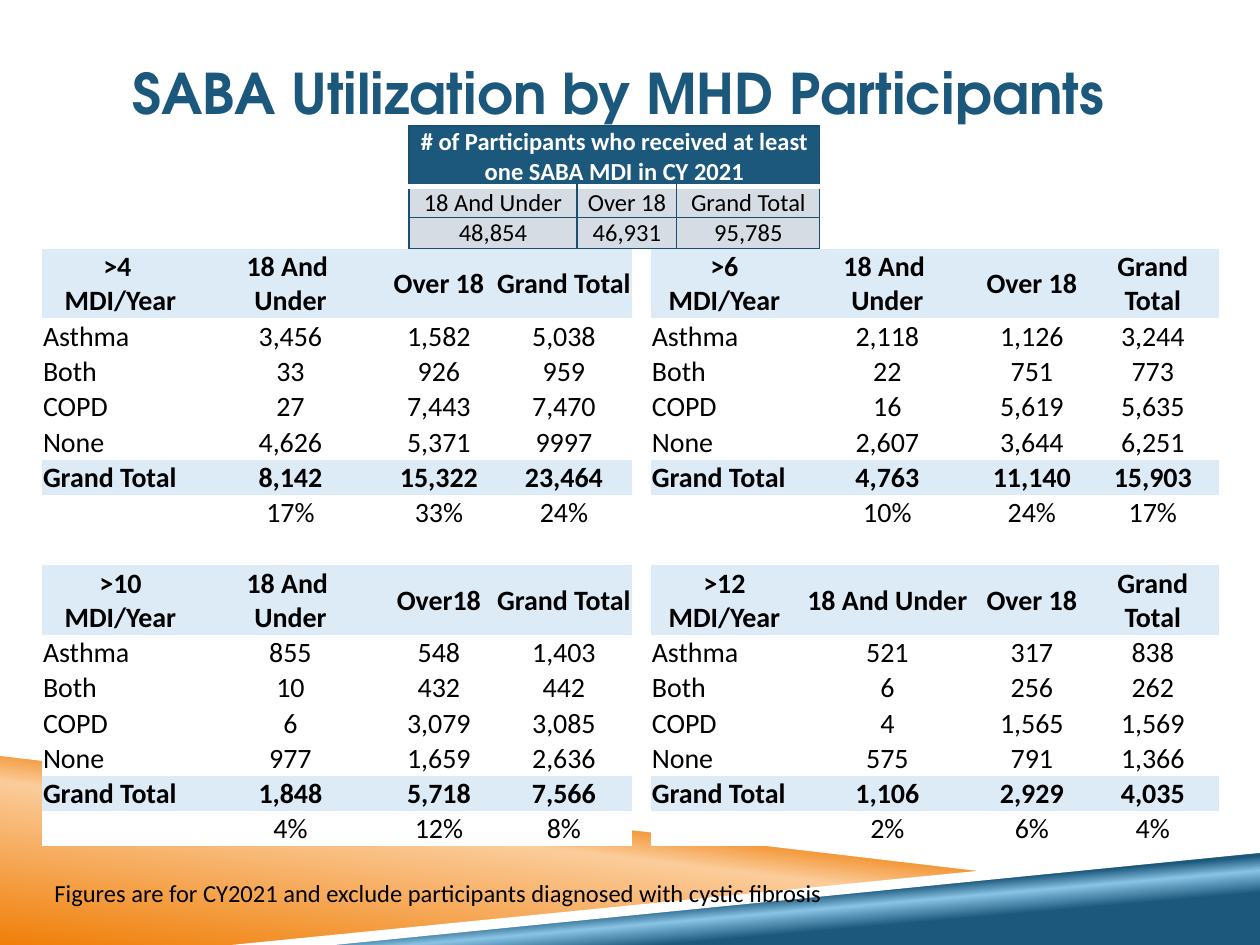
from lxml.etree import SubElement
from pptx import Presentation
from pptx.dml.color import RGBColor
from pptx.enum.text import MSO_ANCHOR as Anchor, PP_ALIGN as Align
from pptx.oxml.ns import qn
from pptx.util import Pt

PX = 914400 // 126
BLUE = RGBColor(0x1B, 0x58, 0x7C)
SKY = RGBColor(0x89, 0xC3, 0xE5)
NAVY = RGBColor(0x19, 0x50, 0x71)
ORANGE = RGBColor(0xF0, 0x7F, 0x09)
PEACH = RGBColor(0xFB, 0xCC, 0x9A)
PALE = RGBColor(0xDD, 0xEB, 0xF7)
GRAY = RGBColor(0xD6, 0xDC, 0xE4)
WHITE = RGBColor(0xFF, 0xFF, 0xFF)
BLACK = RGBColor(0, 0, 0)
PLAIN_TABLE = "{2D5ABB26-0587-4C30-8999-92F81FD0307C}"
GAP_COLUMN = 4

MDI_ROWS = [
    [">4 \nMDI/Year", "18 And \nUnder", "Over 18", "Grand Total", "",
     ">6 MDI/Year", "18 And \nUnder", "Over 18", "Grand Total"],
    ["Asthma", "3,456", "1,582", "5,038", "", "Asthma", "2,118", "1,126", "3,244"],
    ["Both", "33", "926", "959", "", "Both", "22", "751", "773"],
    ["COPD", "27", "7,443", "7,470", "", "COPD", "16", "5,619", "5,635"],
    ["None", "4,626", "5,371", "9997", "", "None", "2,607", "3,644", "6,251"],
    ["Grand Total", "8,142", "15,322", "23,464", "", "Grand Total", "4,763", "11,140", "15,903"],
    ["", "17%", "33%", "24%", "", "", "10%", "24%", "17%"],
    [""] * 9,
    [">10 MDI/Year", "18 And \nUnder", "Over18", "Grand Total", "",
     ">12 MDI/Year", "18 And Under", "Over 18", "Grand Total"],
    ["Asthma", "855", "548", "1,403", "", "Asthma", "521", "317", "838"],
    ["Both", "10", "432", "442", "", "Both", "6", "256", "262"],
    ["COPD", "6", "3,079", "3,085", "", "COPD", "4", "1,565", "1,569"],
    ["None", "977", "1,659", "2,636", "", "None", "575", "791", "1,366"],
    ["Grand Total", "1,848", "5,718", "7,566", "", "Grand Total", "1,106", "2,929", "4,035"],
    ["", "4%", "12%", "8%", "", "", "2%", "6%", "4%"],
]
SUMMARY_ROWS = [
    ["# of Participants who received at least one SABA MDI in CY 2021", "", ""],
    ["18 And Under", "Over 18", "Grand Total"],
    ["48,854", "46,931", "95,785"],
]


def write(frame, text, *, size, color=BLACK, bold=False, align=Align.LEFT, font="Calibri"):
    for index, line in enumerate(text.split("\n")):
        paragraph = frame.add_paragraph() if index else frame.paragraphs[0]
        paragraph.alignment = align
        if not line:
            SubElement(paragraph._p, qn("a:endParaRPr"), sz=str(size * 100))
            continue
        run = paragraph.add_run()
        run.text = line
        run.font.name = font
        run.font.size = Pt(size)
        run.font.bold = bold
        run.font.color.rgb = color


def set_border(cell, side, color, width):
    properties = cell._tc.get_or_add_tcPr()
    line = SubElement(properties, qn(f"a:ln{side}"), w=str(Pt(width)))
    SubElement(SubElement(line, qn("a:solidFill")), qn("a:srgbClr"), val=str(color))


class SlideBuilder:
    def __init__(self, presentation):
        self.slide = presentation.slides.add_slide(presentation.slide_layouts[5])

    def title(self, text, left, top, width, height):
        title = self.slide.shapes.title
        title.left, title.top, title.width, title.height = (
            value * PX for value in (left, top, width, height))
        frame = title.text_frame
        frame.margin_left = frame.margin_right = 0
        frame.vertical_anchor = Anchor.MIDDLE
        write(frame, text, size=32, color=BLUE, bold=True, align=Align.CENTER,
              font="TeX Gyre Adventor")

    def wedge(self, points, color=WHITE, stops=None, angle=0):
        builder = self.slide.shapes.build_freeform(*points[0], scale=PX)
        builder.add_line_segments(points[1:], close=True)
        shape = builder.convert_to_shape()
        shape.shadow.inherit = False
        shape.line.fill.background()
        if not stops:
            shape.fill.solid()
            shape.fill.fore_color.rgb = color
            return
        shape.fill.gradient()
        shape.fill.gradient_angle = angle
        stop_list = shape._element.spPr.find(qn("a:gradFill")).find(qn("a:gsLst"))
        for stop in list(stop_list):
            stop_list.remove(stop)
        for position, stop_color in stops:
            stop = SubElement(stop_list, qn("a:gs"), pos=str(position * 1000))
            SubElement(stop, qn("a:srgbClr"), val=str(stop_color))

    def table(self, left, top, widths, heights):
        table = self.slide.shapes.add_table(
            len(heights), len(widths), left * PX, top * PX,
            sum(widths) * PX, sum(heights) * PX).table
        table.first_row = table.horz_banding = False
        table._tbl.tblPr.find(qn("a:tableStyleId")).text = PLAIN_TABLE
        for column, width in zip(table.columns, widths):
            column.width = width * PX
        for row, height in zip(table.rows, heights):
            row.height = height * PX
        return table

    def cell(self, cell, text, anchor=Anchor.BOTTOM, fill=None, **style):
        cell.margin_left = cell.margin_right = cell.margin_top = PX
        cell.margin_bottom = 0
        cell.vertical_anchor = anchor
        write(cell.text_frame, text, **style)
        if fill is None:
            cell.fill.background()
        else:
            cell.fill.solid()
            cell.fill.fore_color.rgb = fill

    def mdi_table(self, left, top, widths, rows):
        is_header = [row[1].startswith("18 And") for row in rows]
        table = self.table(left, top, widths, [63 if header else 33 for header in is_header])
        for r, row in enumerate(rows):
            strong = is_header[r] or row[0] == "Grand Total"
            for c, text in enumerate(row):
                is_label = c in (0, GAP_COLUMN + 1) and not is_header[r]
                fill = None if c == GAP_COLUMN else PALE if strong else WHITE
                self.cell(table.cell(r, c), text, fill=fill, size=16, bold=strong,
                          anchor=Anchor.MIDDLE if is_header[r] else Anchor.BOTTOM,
                          align=Align.LEFT if is_label else Align.CENTER)

    def summary_table(self, left, top, widths, rows):
        table = self.table(left, top, widths, [60, 30, 30])
        table.cell(0, 0).merge(table.cell(0, len(widths) - 1))
        for r, row in enumerate(rows):
            for c, text in enumerate(row):
                cell = table.cell(r, c)
                for side in "LRTB":
                    if (r, side) in ((0, "B"), (1, "T")):
                        set_border(cell, side, WHITE, 3)
                    else:
                        set_border(cell, side, NAVY, 0.75)
                self.cell(cell, text, size=14, bold=r == 0, align=Align.CENTER,
                          color=BLACK if r else WHITE, fill=GRAY if r else BLUE)

    def note(self, text, left, top, width, height):
        box = self.slide.shapes.add_textbox(left * PX, top * PX, width * PX, height * PX)
        box.text_frame.word_wrap = False
        write(box.text_frame, text, size=14)


def main():
    presentation = Presentation()
    presentation.slide_width = 1260 * PX
    presentation.slide_height = 945 * PX
    builder = SlideBuilder(presentation)
    builder.wedge([(0, 752), (998, 872), (252, 945), (0, 945)],
                  stops=[(0, ORANGE), (52, PEACH), (66, ORANGE)], angle=83)
    builder.wedge([(249, 945), (1260, 847), (1260, 945)],
                  stops=[(28, BLUE), (40, SKY), (48, BLUE)], angle=95)
    builder.wedge([(0, 746), (0, 756), (995, 873), (1048, 869)])
    builder.wedge([(1260, 843), (232, 945), (335, 945), (1260, 853)])
    builder.title("SABA Utilization by MHD Participants ", 84, 32, 1086, 121)
    builder.mdi_table(42, 249, [157, 183, 114, 136, 19, 147, 179, 110, 132], MDI_ROWS)
    builder.summary_table(409, 126, [168, 100, 143], SUMMARY_ROWS)
    builder.note("Figures are for CY2021 and exclude participants diagnosed with cystic fibrosis",
                 42, 872, 801, 43)
    presentation.save("out.pptx")


if __name__ == "__main__":
    main()
